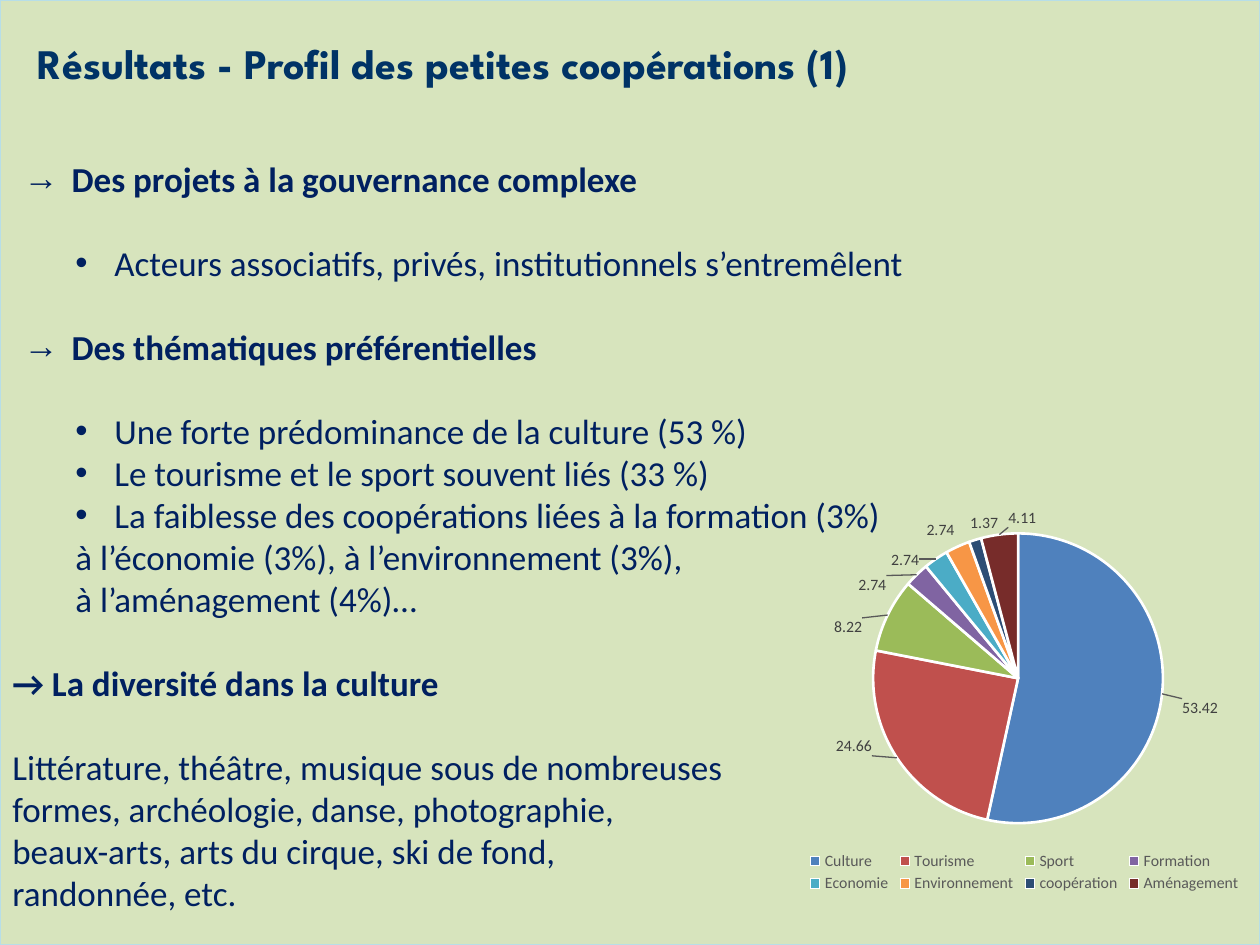
from lxml import etree
from pptx import Presentation
from pptx.chart.data import CategoryChartData
from pptx.dml.color import RGBColor
from pptx.enum.chart import XL_CHART_TYPE, XL_LABEL_POSITION as POS, XL_LEGEND_POSITION as LEG
from pptx.enum.shapes import MSO_SHAPE
from pptx.enum.text import MSO_ANCHOR, PP_ALIGN
from pptx.oxml import parse_xml
from pptx.oxml.ns import nsdecls, qn
from pptx.util import Inches, Pt

GREEN = RGBColor(0xD7, 0xE4, 0xBD)
SKY = RGBColor(0xB7, 0xDE, 0xE8)
TITLE = RGBColor(0x00, 0x33, 0x66)
NAVY = RGBColor(0x00, 0x20, 0x60)
WHITE = RGBColor(0xFF, 0xFF, 0xFF)
GREY = RGBColor(0x59, 0x59, 0x59)
DARK = RGBColor(0x40, 0x40, 0x40)

TITLE_FONT = {"name": "League Spartan", "size": Pt(24), "bold": True}
BODY_FONT = {"name": "Calibri", "size": Pt(20)}
CHART_FONT = {"name": "Calibri", "size": Pt(9)}

STYLES = {
    "head": {"bullet": "→", "left": 0.47, "indent": -0.38, "bold": True},
    "item": {"bullet": "•", "left": 0.81, "indent": -0.31, "level": 1},
    "more": {"left": 0.5, "level": 1},
    "strong": {"bold": True, "align": PP_ALIGN.JUSTIFY},
    "plain": {"align": PP_ALIGN.JUSTIFY},
}

GAP = True
BODY = [
    ("head", "Des projets à la gouvernance complexe", False),
    ("item", "Acteurs associatifs, privés, institutionnels s’entremêlent", GAP),
    ("head", "Des thématiques préférentielles", GAP),
    ("item", "Une forte prédominance de la culture (53 %)", GAP),
    ("item", "Le tourisme et le sport souvent liés (33 %)", False),
    ("item", "La faiblesse des coopérations liées à la formation (3%)", False),
    ("more", "à l’économie (3%), à l’environnement (3%),", False),
    ("more", "à l’aménagement (4%)…", False),
    ("strong", "→ La diversité dans la culture", GAP),
    ("plain", "Littérature, théâtre, musique sous de nombreuses", GAP),
    ("plain", "formes, archéologie, danse, photographie,", False),
    ("plain", "beaux-arts, arts du cirque, ski de fond,", False),
    ("plain", "randonnée, etc.", False),
]

THEMES = [
    ("Culture", 53.42, "4F81BD", (0.02, 0.01)),
    ("Tourisme", 24.66, "C0504D", (-0.03, -0.06)),
    ("Sport", 8.22, "9BBB59", (-0.03, 0.06)),
    ("Formation", 2.74, "8064A2", (-0.04, 0.06)),
    ("Economie", 2.74, "4BACC6", (-0.02, 0.04)),
    ("Environnement", 2.74, "F79646", (0, 0)),
    ("coopération", 1.37, "2C4D75", (0.04, 0)),
    ("Aménagement", 4.11, "772C2A", (0.06, 0)),
]


def set_font(font, color, values):
    for name, value in values.items():
        setattr(font, name, value)
    font.color.rgb = color


def add_background(s, box):
    sp = s.shapes.add_shape(MSO_SHAPE.RECTANGLE, *map(Inches, box))
    sp.shadow.inherit = False
    sp.fill.solid()
    sp.fill.fore_color.rgb = GREEN
    sp.line.color.rgb = SKY
    sp.line.width = Pt(0.75)


def add_title(s, box):
    tf = s.shapes.add_textbox(*map(Inches, box)).text_frame
    tf.word_wrap = False
    r = tf.paragraphs[0].add_run()
    r.text = "Résultats - Profil des petites coopérations (1)"
    set_font(r.font, TITLE, TITLE_FONT)


def set_indent(p, style):
    pPr = p._p.get_or_add_pPr()
    pPr.set("marL", str(Inches(style.get("left", 0))))
    pPr.set("indent", str(Inches(style.get("indent", 0))))
    if "bullet" in style:
        etree.SubElement(pPr, qn("a:buFont")).set("typeface", "Arial")
        etree.SubElement(pPr, qn("a:buChar")).set("char", style["bullet"])
    else:
        etree.SubElement(pPr, qn("a:buNone"))


def add_body(s, box):
    tf = s.shapes.add_textbox(*map(Inches, box)).text_frame
    tf.word_wrap = True
    tf.vertical_anchor = MSO_ANCHOR.TOP
    tf.margin_top = Inches(0.41)
    for i, (kind, text, gap) in enumerate(BODY):
        style = STYLES[kind]
        p = tf.add_paragraph() if i else tf.paragraphs[0]
        p.level = style.get("level", 0)
        p.alignment = style.get("align", PP_ALIGN.LEFT)
        p.line_spacing = Pt(24)
        p.space_before = Pt(24 if gap else 0)
        set_indent(p, style)
        r = p.add_run()
        r.text = text
        set_font(r.font, NAVY, {**BODY_FONT, "bold": style.get("bold", False)})


def make_layout(**values):
    parts = "".join(f'<c:{tag} val="{value}"/>' for tag, value in values.items())
    return parse_xml(f'<c:layout {nsdecls("c")}><c:manualLayout>{parts}'
                     "</c:manualLayout></c:layout>")


def place(parent, index, **values):
    for old in parent.findall(qn("c:layout")):
        parent.remove(old)
    parent.insert(index, make_layout(**values))


def add_labels(series):
    labels = series.data_labels
    labels.show_value = True
    labels.show_percentage = False
    labels.number_format = "0.00"
    labels.number_format_is_linked = False
    labels.position = POS.OUTSIDE_END
    set_font(labels.font, DARK, CHART_FONT)
    for i, (_, _, _, (dx, dy)) in enumerate(THEMES):
        label = series.points[i].data_label
        set_font(label.font, DARK, CHART_FONT)
        label.position = POS.OUTSIDE_END
        if dx or dy:
            place(label._dLbl, 1, x=dx, y=dy)

    dLbls = labels._element
    for old in dLbls.findall(qn("c:showLeaderLines")):
        dLbls.remove(old)
    etree.SubElement(dLbls, qn("c:showLeaderLines")).set("val", "1")
    dLbls.append(parse_xml(
        f'<c:leaderLines {nsdecls("c", "a")}><c:spPr><a:ln w="9525"><a:solidFill>'
        f'<a:srgbClr val="{GREY}"/></a:solidFill></a:ln></c:spPr></c:leaderLines>'))


def add_theme_chart(s, box):
    data = CategoryChartData(number_format="0.00")
    data.categories = [name for name, *_ in THEMES]
    data.add_series("Series 1", [value for _, value, *_ in THEMES])
    chart = s.shapes.add_chart(XL_CHART_TYPE.PIE, *map(Inches, box), data).chart
    chart.has_title = False
    set_font(chart.font, DARK, CHART_FONT)

    plot = chart.plots[0]
    plot.vary_by_categories = True
    series = plot.series[0]
    for i, (_, _, color, _) in enumerate(THEMES):
        fmt = series.points[i].format
        fmt.fill.solid()
        fmt.fill.fore_color.rgb = RGBColor.from_string(color)
        fmt.line.color.rgb = WHITE
        fmt.line.width = Pt(1.5)
    add_labels(series)

    chart.has_legend = True
    legend = chart.legend
    legend.position = LEG.BOTTOM
    legend.include_in_layout = False
    set_font(legend.font, GREY, CHART_FONT)

    edge = {"xMode": "edge", "yMode": "edge"}
    place(chart._chartSpace.chart.plotArea, 0, layoutTarget="inner", **edge,
          x=0.26, y=0.1, w=0.46, h=0.71)
    place(legend._element, 1, **edge, x=0.15, y=0.87, w=0.7, h=0.12)


def main():
    prs = Presentation()
    prs.slide_width, prs.slide_height = Inches(10), Inches(7.5)
    s = prs.slides.add_slide(prs.slide_layouts[6])
    add_background(s, (0, 0, 10, 7.5))
    add_title(s, (0.2, 0.25, 7.37, 0.5))
    add_body(s, (0, 0.84, 9.8, 6.83))
    add_theme_chart(s, (5.63, 3.91, 5, 3.24))
    prs.save("out.pptx")


if __name__ == "__main__":
    main()
